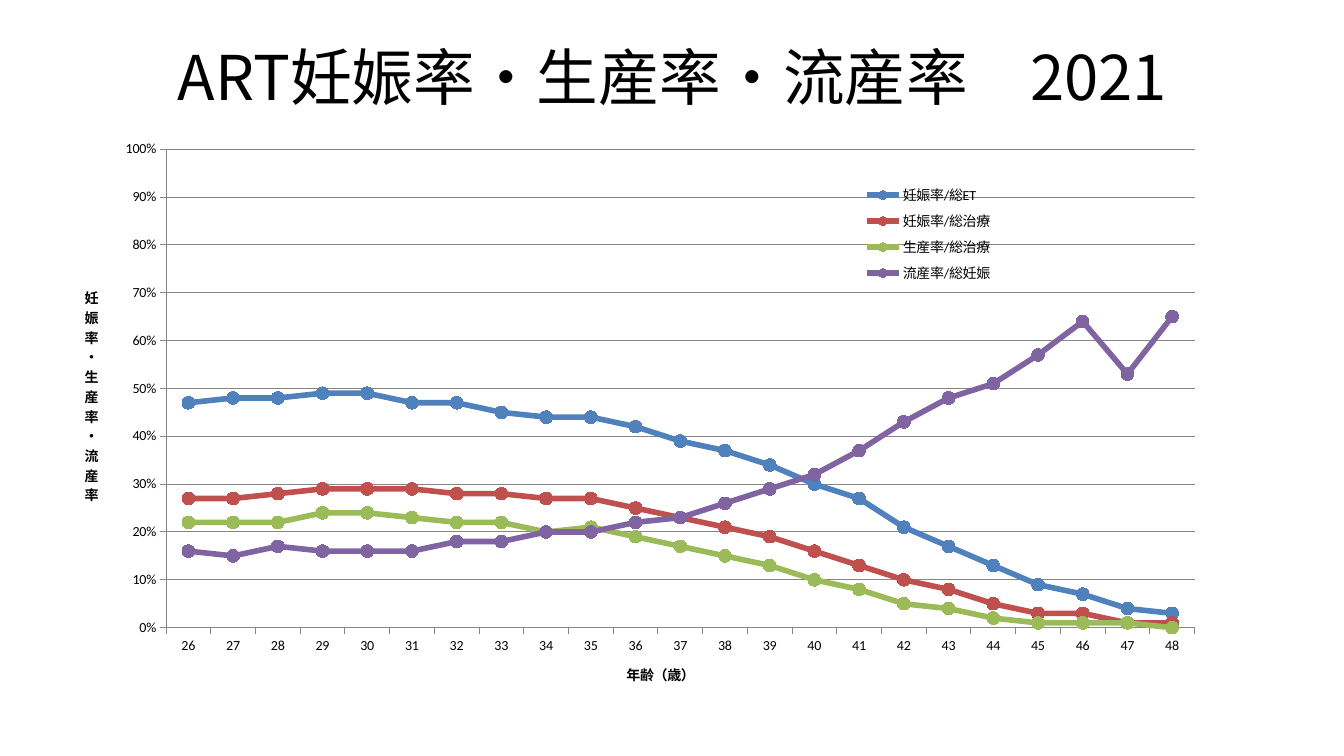
from copy import deepcopy

from lxml import etree
from pptx import Presentation
from pptx.chart.data import CategoryChartData
from pptx.dml.color import RGBColor
from pptx.enum.chart import XL_CHART_TYPE, XL_LEGEND_POSITION, XL_MARKER_STYLE, XL_TICK_MARK
from pptx.enum.text import MSO_ANCHOR, PP_ALIGN
from pptx.oxml.ns import qn
from pptx.util import Inches, Pt

LINE_MARKERS = XL_CHART_TYPE.LINE_MARKERS
LEGEND_RIGHT = XL_LEGEND_POSITION.RIGHT
CIRCLE = XL_MARKER_STYLE.CIRCLE
TICK_OUTSIDE = XL_TICK_MARK.OUTSIDE
MIDDLE = MSO_ANCHOR.MIDDLE
CENTER = PP_ALIGN.CENTER

BLACK = RGBColor(0x00, 0x00, 0x00)
GRAY = RGBColor(0x86, 0x86, 0x86)
BLUE = RGBColor(0x4F, 0x81, 0xBD)
RED = RGBColor(0xC0, 0x50, 0x4D)
GREEN = RGBColor(0x9B, 0xBB, 0x59)
PURPLE = RGBColor(0x80, 0x64, 0xA2)

TITLE_FONT = "Noto Sans CJK JP"
CHART_FONT = "Calibri"

AGES = range(26, 49)
RATES = [
    ("妊娠率/総ET", BLUE, [47, 48, 48, 49, 49, 47, 47, 45, 44, 44, 42, 39,
                        37, 34, 30, 27, 21, 17, 13, 9, 7, 4, 3]),
    ("妊娠率/総治療", RED, [27, 27, 28, 29, 29, 29, 28, 28, 27, 27, 25, 23,
                       21, 19, 16, 13, 10, 8, 5, 3, 3, 1, 1]),
    ("生産率/総治療", GREEN, [22, 22, 22, 24, 24, 23, 22, 22, 20, 21, 19, 17,
                         15, 13, 10, 8, 5, 4, 2, 1, 1, 1, 0]),
    ("流産率/総妊娠", PURPLE, [16, 15, 17, 16, 16, 16, 18, 18, 20, 20, 22, 23,
                          26, 29, 32, 37, 43, 48, 51, 57, 64, 53, 65]),
]


def add_title(slide, left, top, width, height):
    title = slide.shapes.title
    title.left, title.top, title.width, title.height = left, top, width, height
    title.text_frame.text = "ART妊娠率・生産率・流産率　2021"
    title.text_frame.vertical_anchor = MIDDLE
    paragraph = title.text_frame.paragraphs[0]
    paragraph.alignment = CENTER
    run = paragraph.runs[0]
    run.font.size = Pt(44)
    run.font.name = TITLE_FONT
    run.font.color.rgb = BLACK
    east_asian = etree.Element(qn("a:ea"), typeface=TITLE_FONT)
    run._r.get_or_add_rPr().find(qn("a:latin")).addnext(east_asian)


def set_layout(parent, index, settings):
    for old_layout in parent.findall(qn("c:layout")):
        parent.remove(old_layout)
    layout = etree.Element(qn("c:layout"))
    manual = etree.SubElement(layout, qn("c:manualLayout"))
    for name, value in settings.items():
        etree.SubElement(manual, qn(f"c:{name}"), val=str(value))
    parent.insert(index, layout)


def format_axis(axis, title):
    axis.major_tick_mark = TICK_OUTSIDE
    axis.format.line.color.rgb = GRAY
    axis.format.line.width = Pt(0.75)
    axis.tick_labels.font.size = Pt(10)
    axis.axis_title.text_frame.text = title
    font = axis.axis_title.text_frame.paragraphs[0].runs[0].font
    font.size = Pt(10)
    font.bold = True
    font.name = CHART_FONT
    font.color.rgb = BLACK


def format_series(series, color):
    series.smooth = False
    series.format.line.color.rgb = color
    series.format.line.width = Pt(4)
    series.marker.style = CIRCLE
    series.marker.size = 9
    series.marker.format.fill.solid()
    series.marker.format.fill.fore_color.rgb = color
    series.marker.format.line.color.rgb = color


def arrange_chart(chart):
    edges = {"xMode": "edge", "yMode": "edge"}
    root = chart.element
    set_layout(root.find(f".//{qn('c:plotArea')}"), 0,
               {"layoutTarget": "inner", **edges, "x": 0.097, "y": 0.033, "w": 0.82, "h": 0.868})
    set_layout(root.find(f".//{qn('c:legend')}"), 1,
               {**edges, "x": 0.645, "y": 0.087, "w": 0.12, "h": 0.2})
    age_title = root.find(f".//{qn('c:catAx')}/{qn('c:title')}")
    rate_title = root.find(f".//{qn('c:valAx')}/{qn('c:title')}")
    set_layout(age_title, 1, {**edges, "x": 0.462, "y": 0.96})
    set_layout(rate_title, 1, {**edges, "x": 0.03, "y": 0.277})
    body = rate_title.find(f".//{qn('a:bodyPr')}")
    body.set("rot", "0")
    body.set("vert", "wordArtVertRtl")


def move_last_series_to_right_axis(chart):
    left_lines = chart.element.find(f".//{qn('c:lineChart')}")
    right_lines = deepcopy(left_lines)
    left_lines.remove(left_lines.findall(qn("c:ser"))[-1])
    for series in right_lines.findall(qn("c:ser"))[:-1]:
        right_lines.remove(series)
    left_lines.addnext(right_lines)

    plot_area = left_lines.getparent()
    age_axis = plot_area.find(qn("c:catAx"))
    rate_axis = plot_area.find(qn("c:valAx"))
    right_ids = {axis.find(qn("c:axId")).get("val"): str(number)
                 for number, axis in enumerate((age_axis, rate_axis), 50001)}
    right_rates, hidden_ages = deepcopy(rate_axis), deepcopy(age_axis)
    rate_axis.addnext(right_rates)
    right_rates.addnext(hidden_ages)
    for axis in (right_rates, hidden_ages):
        for name in ("title", "majorGridlines"):
            for part in axis.findall(qn(f"c:{name}")):
                axis.remove(part)
        axis.find(qn("c:delete")).set("val", "1")
    right_rates.find(qn("c:axPos")).set("val", "r")
    right_rates.find(qn("c:crosses")).set("val", "max")
    for part in (right_lines, right_rates, hidden_ages):
        for name in ("axId", "crossAx"):
            for reference in part.findall(qn(f"c:{name}")):
                reference.set("val", right_ids[reference.get("val")])


def add_rate_chart(slide, left, top, width, height):
    data = CategoryChartData(number_format="0%")
    data.categories = [str(age) for age in AGES]
    for name, _, percentages in RATES:
        data.add_series(name, [value / 100 for value in percentages])
    chart = slide.shapes.add_chart(LINE_MARKERS, left, top, width, height, data).chart
    chart.has_title = False
    chart.font.size = Pt(10)
    chart.font.name = CHART_FONT
    chart.font.color.rgb = BLACK
    chart.plots[0].vary_by_categories = False

    format_axis(chart.category_axis, "年齢（歳）")
    rate_axis = chart.value_axis
    format_axis(rate_axis, "妊娠率・生産率・流産率")
    rate_axis.minimum_scale = 0
    rate_axis.maximum_scale = 1
    rate_axis.major_unit = 0.1
    rate_axis.tick_labels.number_format = "0%"
    rate_axis.tick_labels.number_format_is_linked = False
    rate_axis.has_major_gridlines = True
    rate_axis.major_gridlines.format.line.color.rgb = GRAY
    rate_axis.major_gridlines.format.line.width = Pt(0.75)

    for series, (_, color, _) in zip(chart.plots[0].series, RATES):
        format_series(series, color)

    chart.has_legend = True
    chart.legend.position = LEGEND_RIGHT
    chart.legend.include_in_layout = False
    chart.legend.font.size = Pt(10)
    arrange_chart(chart)
    move_last_series_to_right_axis(chart)


def main():
    presentation = Presentation()
    presentation.slide_width = Inches(13.33)
    presentation.slide_height = Inches(7.5)
    slide = presentation.slides.add_slide(presentation.slide_layouts[5])
    add_title(slide, Inches(0.67), Inches(0.3), Inches(12), Inches(0.91))
    add_rate_chart(slide, Inches(0.44), Inches(1.3), Inches(12.44), Inches(5.53))
    presentation.save("out.pptx")


if __name__ == "__main__":
    main()
